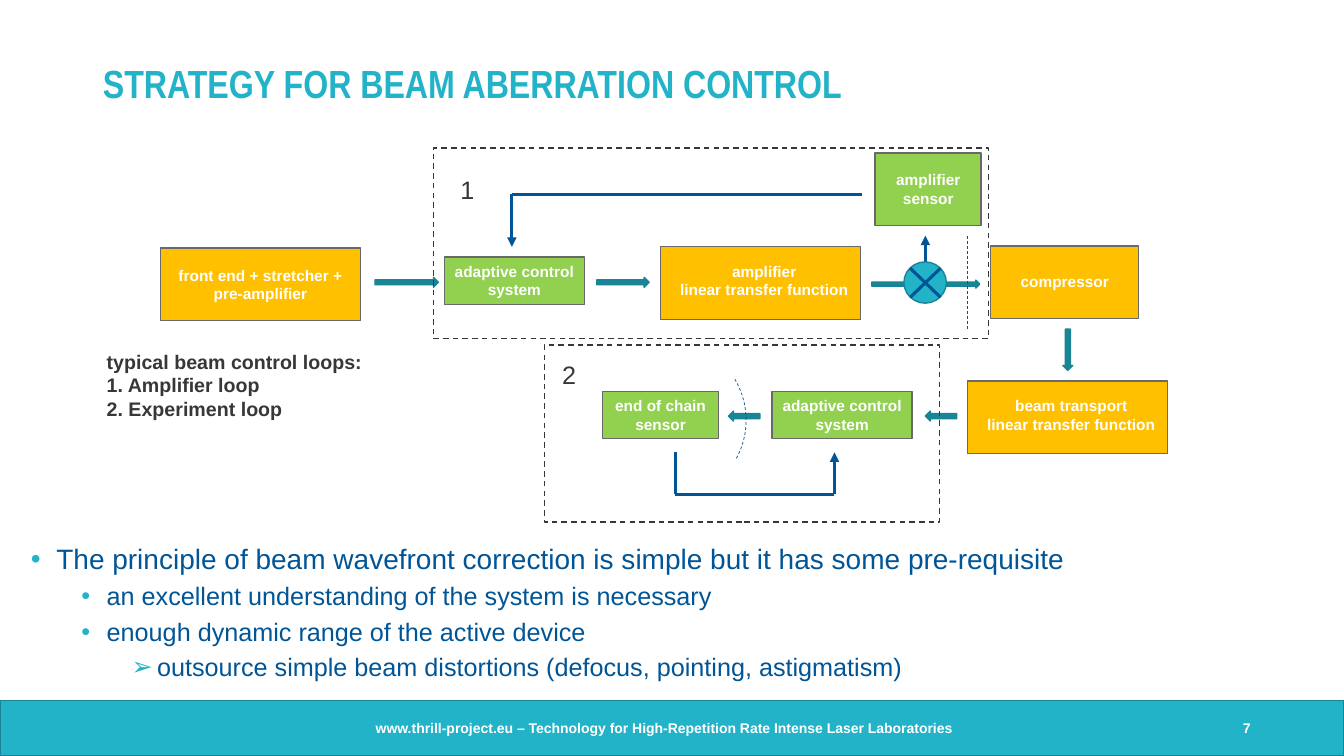
from lxml.etree import SubElement
from pptx import Presentation
from pptx.dml.color import RGBColor
from pptx.enum.dml import MSO_LINE
from pptx.enum.shapes import MSO_CONNECTOR, MSO_SHAPE as SHAPE
from pptx.enum.text import MSO_ANCHOR as ANCHOR, MSO_AUTO_SIZE, PP_ALIGN as ALIGN
from pptx.oxml.ns import qn
from pptx.util import Cm, Pt

CYAN = RGBColor(0x22, 0xB3, 0xC9)
TEAL = RGBColor(0x19, 0x86, 0x97)
TEAL_EDGE = RGBColor(0x19, 0x84, 0x95)
NAVY = RGBColor(0x00, 0x55, 0x97)
GREEN = RGBColor(0x92, 0xD0, 0x50)
AMBER = RGBColor(0xFF, 0xC0, 0x00)
GREY = RGBColor(0x69, 0x69, 0x69)
DARK = RGBColor(0x37, 0x37, 0x37)
WHITE = RGBColor(0xFF, 0xFF, 0xFF)

TITLE = "STRATEGY FOR BEAM ABERRATION CONTROL"
FOOTER = "www.thrill-project.eu – Technology for High-Repetition Rate Intense Laser Laboratories"

# Diagram boxes: fill, frame, label area, text
STAGES = [
    (AMBER, (16.64, 6.22, 5.05, 1.83), (16.87, 6.48, 4.78, 1.19),
     "amplifier\nlinear transfer function"),
    (AMBER, (24.97, 6.2, 3.73, 1.83), (25.45, 6.73, 2.77, 0.74), "compressor"),
    (AMBER, (24.38, 9.6, 5.05, 1.83), (24.61, 9.86, 4.78, 1.19),
     "beam transport\nlinear transfer function"),
    (GREEN, (22.05, 3.86, 2.67, 1.83), (22.33, 4.17, 2.13, 1.19), "amplifier\nsensor"),
]
CONTROLS = [
    ((11.2, 6.48, 3.53, 1.19), "adaptive control\nsystem"),
    ((19.46, 9.86, 3.53, 1.19), "adaptive control\nsystem"),
    ((15.19, 9.86, 2.92, 1.19), "end of chain\nsensor"),
]
BEAM_ARROWS = [
    ((9.45, 6.99, 1.6, 0.25), 0),
    ((15.04, 6.99, 1.32, 0.25), 0),
    ((21.97, 7.06, 2.72, 0.2), 0),
    ((26.39, 8.69, 1.04, 0.25), 90),
    ((18.36, 10.36, 0.79, 0.25), 180),
    ((23.32, 10.36, 0.79, 0.25), 180),
]
# Signal lines: start, end, arrowhead
SIGNALS = [
    ((12.9, 4.9), (12.9, 6.22), True),
    ((21.72, 4.9), (12.9, 4.9), False),
    ((21.03, 12.45), (21.03, 11.4), True),
    ((21.03, 12.45), (17.02, 12.45), False),
    ((17.02, 12.45), (17.02, 11.4), False),
]
LOOP_FRAMES = [(10.92, 3.73, 14, 4.8), (13.72, 8.69, 9.96, 4.47)]
# Bullets: level, sign, size, text
BULLETS = [
    (0, "•", 20, "The principle of beam wavefront correction is simple but it has some pre-requisite"),
    (1, "•", 18, "an excellent understanding of the system is necessary"),
    (1, "•", 18, "enough dynamic range of the active device"),
    (2, "➢", 18, "outsource simple beam distortions (defocus, pointing, astigmatism)"),
]


def cm(values):
    return [Cm(value) for value in values]


def write(shape, text, size, color, bold=False, align=ALIGN.LEFT,
          anchor=ANCHOR.TOP, wrap=True, font="Arial"):
    frame = shape.text_frame
    frame.text = text
    frame.word_wrap = wrap
    frame.auto_size = MSO_AUTO_SIZE.NONE
    frame.vertical_anchor = anchor
    for paragraph in frame.paragraphs:
        paragraph.alignment = align
        for run in paragraph.runs:
            run.font.name = font
            run.font.size = Pt(size)
            run.font.bold = bold
            run.font.color.rgb = color
    return frame


def add_text(slide, area, text, size, color, **style):
    return write(slide.shapes.add_textbox(*cm(area)), text, size, color, **style)


def add_figure(slide, kind, area, fill=None, edge=None, width=1, dashed=False, turn=0):
    figure = slide.shapes.add_shape(kind, *cm(area))
    figure.shadow.inherit = False
    figure.rotation = turn
    if fill is None:
        figure.fill.background()
    else:
        figure.fill.solid()
        figure.fill.fore_color.rgb = fill
    if edge is None:
        figure.line.fill.background()
    else:
        figure.line.color.rgb = edge
        figure.line.width = Pt(width)
    if dashed:
        figure.line.dash_style = MSO_LINE.DASH
    return figure


def add_box(slide, area, fill, text, edge=GREY, anchor=ANCHOR.TOP, wrap=False):
    box = add_figure(slide, SHAPE.RECTANGLE, area, fill, edge)
    write(box, text, 11, WHITE, bold=True, align=ALIGN.CENTER, anchor=anchor, wrap=wrap)


def add_line(slide, start, end, arrow=False, width=2.25, dashed=False):
    line = slide.shapes.add_connector(MSO_CONNECTOR.STRAIGHT, *cm(start + end))
    line.line.color.rgb = NAVY
    line.line.width = Pt(width)
    if dashed:
        line.line.dash_style = MSO_LINE.DASH
    properties = line.element.spPr
    if arrow:
        SubElement(properties.find(qn("a:ln")), qn("a:tailEnd"), type="triangle")
    SubElement(properties, qn("a:effectLst"))


def add_bullets(slide, area):
    frame = slide.shapes.add_textbox(*cm(area)).text_frame
    frame.word_wrap = True
    frame.text = "\n".join(text for *_, text in BULLETS)
    for paragraph, (level, sign, size, _) in zip(frame.paragraphs, BULLETS):
        paragraph.level = level
        paragraph.line_spacing = 0.9
        paragraph.space_after = Pt(6)
        properties = paragraph._p.get_or_add_pPr()
        properties.set("marL", str(Cm(0.64 + 1.27 * level)))
        properties.set("indent", str(-Cm(0.64)))
        bullet_color = SubElement(properties, qn("a:buClr"))
        SubElement(bullet_color, qn("a:srgbClr"), val=str(CYAN))
        SubElement(properties, qn("a:buFont"), typeface="Arial")
        SubElement(properties, qn("a:buChar"), char=sign)
        paragraph.font.name = "Arial"
        for run in paragraph.runs:
            run.font.name = "Arial"
            run.font.size = Pt(size)
            run.font.color.rgb = NAVY


def add_title(slide):
    title = slide.shapes.title
    title.left, title.top, title.width, title.height = cm((2.34, 1.02, 29.21, 2.26))
    frame = write(title, TITLE, 28, CYAN, bold=True, anchor=ANCHOR.MIDDLE, font="Arial Narrow")
    frame.paragraphs[0].line_spacing = 0.9


def add_footer(slide):
    add_figure(slide, SHAPE.RECTANGLE, (0, 17.65, 33.87, 1.4), CYAN, TEAL_EDGE)
    footer = add_text(slide, (9.47, 17.83, 14.91, 1.02), FOOTER, 10, WHITE,
                      bold=True, anchor=ANCHOR.MIDDLE)
    footer.margin_left = 0
    number = add_text(slide, (30.12, 17.83, 1.4, 1.02), "7", 10, WHITE,
                      bold=True, align=ALIGN.RIGHT, anchor=ANCHOR.MIDDLE)
    number.margin_right = 0


def add_beam_splitter(slide):
    add_line(slide, (23.32, 6.73), (23.32, 5.94), arrow=True)
    add_figure(slide, SHAPE.OVAL, (22.78, 6.6, 1.07, 1.04), CYAN, TEAL_EDGE)
    add_line(slide, (22.94, 6.76), (23.7, 7.49))
    add_line(slide, (22.94, 7.49), (23.7, 6.76))


def add_diagram(slide):
    # Stages and control units
    for fill, frame, label, text in STAGES:
        add_figure(slide, SHAPE.RECTANGLE, frame, fill, GREY)
        add_box(slide, label, fill, text, edge=None)
    for area, text in CONTROLS:
        add_box(slide, area, GREEN, text)
    add_box(slide, (4.04, 6.25, 5.05, 1.83), AMBER, "front end + stretcher + pre-amplifier",
            anchor=ANCHOR.MIDDLE, wrap=True)

    # Beam path and feedback signals
    for area, turn in BEAM_ARROWS:
        add_figure(slide, SHAPE.RIGHT_ARROW, area, TEAL, TEAL_EDGE, turn=turn)
    add_beam_splitter(slide)
    for start, end, arrow in SIGNALS:
        add_line(slide, start, end, arrow)

    # Wavefronts: flat and curved
    add_line(slide, (24.38, 5.94), (24.38, 8.28), width=0.5, dashed=True)
    wavefront = add_figure(slide, SHAPE.ARC, (14.76, 8.56, 4.06, 3.99), edge=NAVY,
                           width=0.5, dashed=True, turn=44.1)
    wavefront.adjustments[0] = 171.49
    wavefront.adjustments[1] = 207.3

    # Loop frames and their numbers
    for area in LOOP_FRAMES:
        add_figure(slide, SHAPE.RECTANGLE, area, edge=DARK, dashed=True)
    add_text(slide, (11.35, 4.27, 1.12, 1.02), "1", 18, DARK)
    add_text(slide, (13.92, 8.92, 0.86, 1.02), "2", 18, DARK)
    add_text(slide, (2.44, 8.69, 6.96, 2.06),
             "typical beam control loops:\n1. Amplifier loop\n2. Experiment loop",
             14, DARK, bold=True, wrap=False)


def main():
    deck = Presentation()
    deck.slide_width, deck.slide_height = cm((33.87, 19.05))
    slide = deck.slides.add_slide(deck.slide_layouts[5])
    add_footer(slide)
    add_title(slide)
    add_bullets(slide, (0.53, 13.61, 31.19, 3.73))
    add_diagram(slide)
    deck.save("out.pptx")


if __name__ == "__main__":
    main()
